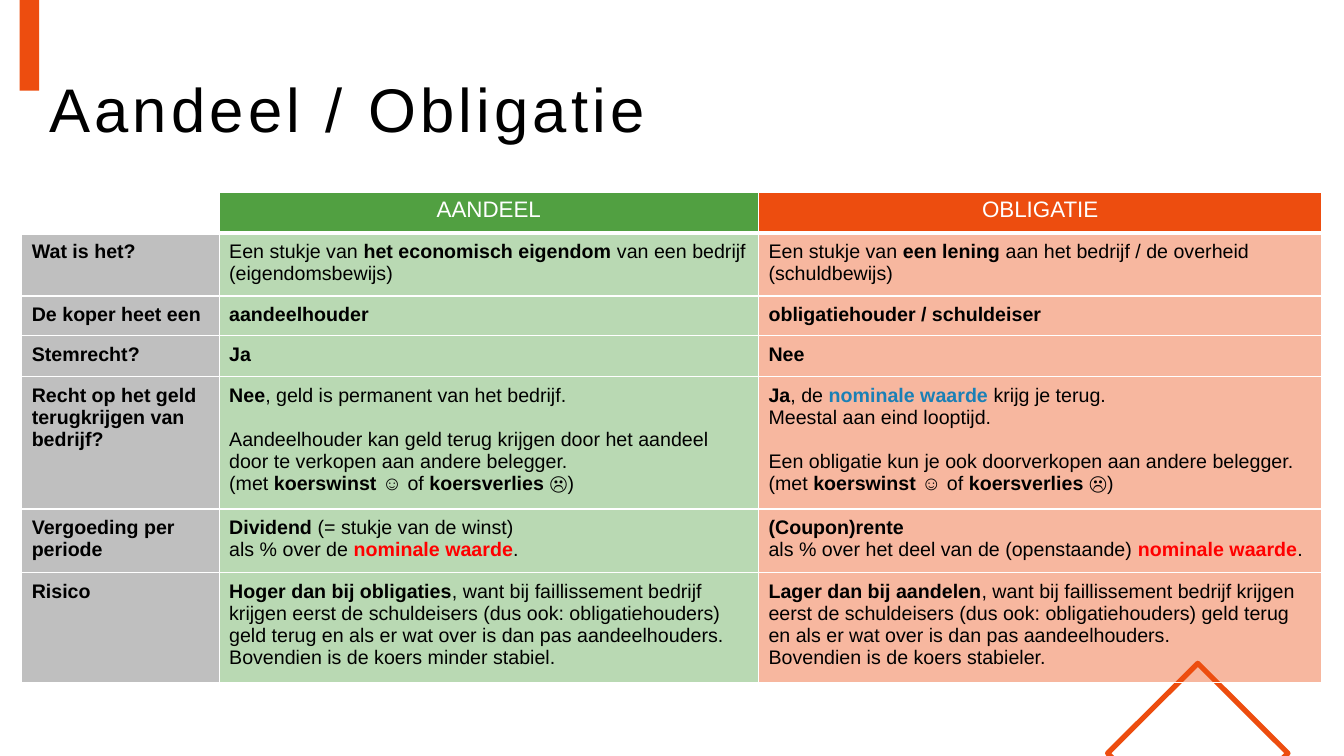
"""Build a slide that compares shares with bonds in a table."""
import pptx
import pptx.enum.shapes
import pptx.enum.text
import pptx.oxml
import pptx.oxml.ns
import pptx.util

Pt = pptx.util.Pt
COLORS = {
    "black": "000000", "white": "FFFFFF", "grey": "BFBFBF", "green": "51A041",
    "orange": "ED4D0F", "blue": "1A80B6", "red": "FF0000",
}
FONT = "Arial"
BODY_SIZE = 14
BLANK_LINE = 15.7
COLUMN_WIDTHS = (141, 385.3, 402.5)
ROW_HEIGHTS = (25.2, 42.9, 27.2, 29.2, 89.8, 42.9, 73.6)


def strong(text, color="black"):
    return text, color


OUTCOME = ["(met ", strong("koerswinst "), "☺ of ", strong("koersverlies "), "☹)"]
FAILURE = (
    ", want bij faillissement bedrijf krijgen eerst de schuldeisers (dus ook: "
    "obligatiehouders) geld terug en als er wat over is dan pas aandeelhouders."
)
ROWS = [
    ("Wat is het?",
     [["Een stukje van ", strong("het economisch eigendom "),
       "van een bedrijf (eigendomsbewijs)"]],
     [["Een stukje van ", strong("een lening "), "aan het bedrijf / de overheid"],
      ["(schuldbewijs)"]]),
    ("De koper heet een",
     [[strong("aandeelhouder")]],
     [[strong("obligatiehouder / schuldeiser")]]),
    ("Stemrecht?", [[strong("Ja")]], [[strong("Nee")]]),
    ("Recht op het geld terugkrijgen van bedrijf?",
     [[strong("Nee"), ", geld is permanent van het bedrijf."],
      [],
      ["Aandeelhouder kan geld terug krijgen door het aandeel "
       "door te verkopen aan andere belegger."],
      OUTCOME],
     [[strong("Ja"), ", de ", strong("nominale waarde ", "blue"), "krijg je terug."],
      ["Meestal aan eind looptijd."],
      [],
      ["Een obligatie kun je ook doorverkopen aan andere belegger. ", *OUTCOME]]),
    ("Vergoeding per periode",
     [[strong("Dividend"), " (= stukje van de winst)"],
      ["als % over de ", strong("nominale waarde", "red"), "."]],
     [[strong("(Coupon)rente")],
      ["als % over het deel van de (openstaande) ",
       strong("nominale waarde", "red"), "."]]),
    ("Risico",
     [[strong("Hoger dan bij obligaties"), FAILURE],
      ["Bovendien is de koers minder stabiel."]],
     [[strong("Lager dan bij aandelen"), FAILURE],
      ["Bovendien is de koers stabieler."]]),
]


class SlideBuilder:
    def __init__(self, page):
        self.page = page

    def color(self, name):
        return pptx.dml.color.RGBColor.from_string(COLORS[name])

    def style(self, paragraph, size, color):
        paragraph.font.name = FONT
        paragraph.font.size = Pt(size)
        paragraph.font.color.rgb = self.color(color)

    def bar(self, left, top, width, height):
        box = self.page.shapes.add_shape(
            pptx.enum.shapes.MSO_SHAPE.RECTANGLE,
            Pt(left), Pt(top), Pt(width), Pt(height))
        box.shadow.inherit = False
        box.fill.solid()
        box.fill.fore_color.rgb = self.color("orange")
        box.line.fill.background()

    def outline(self, points, width):
        start, *others = [(Pt(x), Pt(y)) for x, y in points]
        builder = self.page.shapes.build_freeform(*start)
        builder.add_line_segments(others, close=True)
        shape = builder.convert_to_shape()
        shape.shadow.inherit = False
        shape.fill.background()
        shape.line.color.rgb = self.color("orange")
        shape.line.width = Pt(width)

    def title(self, text, left, top, width, height):
        box = self.page.shapes.add_textbox(Pt(left), Pt(top), Pt(width), Pt(height))
        frame = box.text_frame
        frame.word_wrap = True
        frame.vertical_anchor = pptx.enum.text.MSO_ANCHOR.MIDDLE
        para = frame.paragraphs[0]
        para.line_spacing = 0.9
        self.style(para, 44, "black")
        span = para.add_run()
        span.text = text
        span.font._element.set("spc", "300")

    def table(self, left, top):
        table = self.page.shapes.add_table(
            len(ROW_HEIGHTS), len(COLUMN_WIDTHS), Pt(left), Pt(top),
            Pt(sum(COLUMN_WIDTHS)), Pt(sum(ROW_HEIGHTS))).table
        table.first_row = table.horz_banding = False
        for column, width in zip(table.columns, COLUMN_WIDTHS):
            column.width = Pt(width)
        for row, height in zip(table.rows, ROW_HEIGHTS):
            row.height = Pt(height)
        self.borders(table.cell(0, 0), 3)
        table.cell(0, 0).fill.background()
        self.header(table.cell(0, 1), "AANDEEL", "green")
        self.header(table.cell(0, 2), "OBLIGATIE", "orange")
        for index, (label, share, bond) in enumerate(ROWS, start=1):
            self.body(table.cell(index, 0), [[strong(label)]], "grey")
            self.body(table.cell(index, 1), share, "green", 40)
            self.body(table.cell(index, 2), bond, "orange", 40)

    def borders(self, cell, bottom=1):
        properties = cell._tc.get_or_add_tcPr()
        for side, width in (("L", 1), ("R", 1), ("T", 1), ("B", bottom)):
            properties.append(pptx.oxml.parse_xml(
                f'<a:ln{side} {pptx.oxml.ns.nsdecls("a")} w="{Pt(width)}">'
                f'<a:solidFill><a:srgbClr val="{COLORS["white"]}"/></a:solidFill>'
                f'</a:ln{side}>'))

    def fill(self, cell, color, opacity=100):
        cell.fill.solid()
        cell.fill.fore_color.rgb = self.color(color)
        if opacity < 100:
            tint = cell._tc.tcPr.find(
                f'{pptx.oxml.ns.qn("a:solidFill")}/{pptx.oxml.ns.qn("a:srgbClr")}')
            tint.append(pptx.oxml.parse_xml(
                f'<a:alpha {pptx.oxml.ns.nsdecls("a")} val="{opacity * 1000}"/>'))

    def header(self, cell, text, color):
        self.borders(cell, 3)
        self.fill(cell, color)
        para = cell.text_frame.paragraphs[0]
        para.alignment = pptx.enum.text.PP_ALIGN.CENTER
        self.style(para, 16, "white")
        para.add_run().text = text

    def body(self, cell, lines, color, opacity=100):
        self.borders(cell)
        self.fill(cell, color, opacity)
        cell.margin_left = cell.margin_right = Pt(7.2)
        cell.margin_top = cell.margin_bottom = Pt(5.76)
        frame = cell.text_frame
        para, gap = frame.paragraphs[0], False
        for index, line in enumerate(lines):
            if not line:
                gap = True
                continue
            if index:
                para = frame.add_paragraph()
            if gap:
                para.space_before = Pt(BLANK_LINE)
                gap = False
            self.style(para, BODY_SIZE, "black")
            for part in line:
                self.span(para, part)

    def span(self, para, part):
        span = para.add_run()
        if isinstance(part, str):
            span.text = part
            return
        span.text, color = part
        span.font.bold = True
        if color != "black":
            span.font.color.rgb = self.color(color)


def main():
    deck = pptx.Presentation()
    deck.slide_width, deck.slide_height = Pt(960), Pt(540)
    builder = SlideBuilder(deck.slides.add_slide(deck.slide_layouts[6]))
    builder.bar(14, -18, 14, 82.8)
    builder.outline(
        [(855.6, 473.8), (920, 538), (913.6, 544.4), (797.6, 544.4), (791.2, 538)], 3.75)
    builder.title("Aandeel / Obligatie", 28, 28, 908, 104.4)
    builder.table(15.5, 137.5)
    deck.save("out.pptx")


if __name__ == "__main__":
    main()
